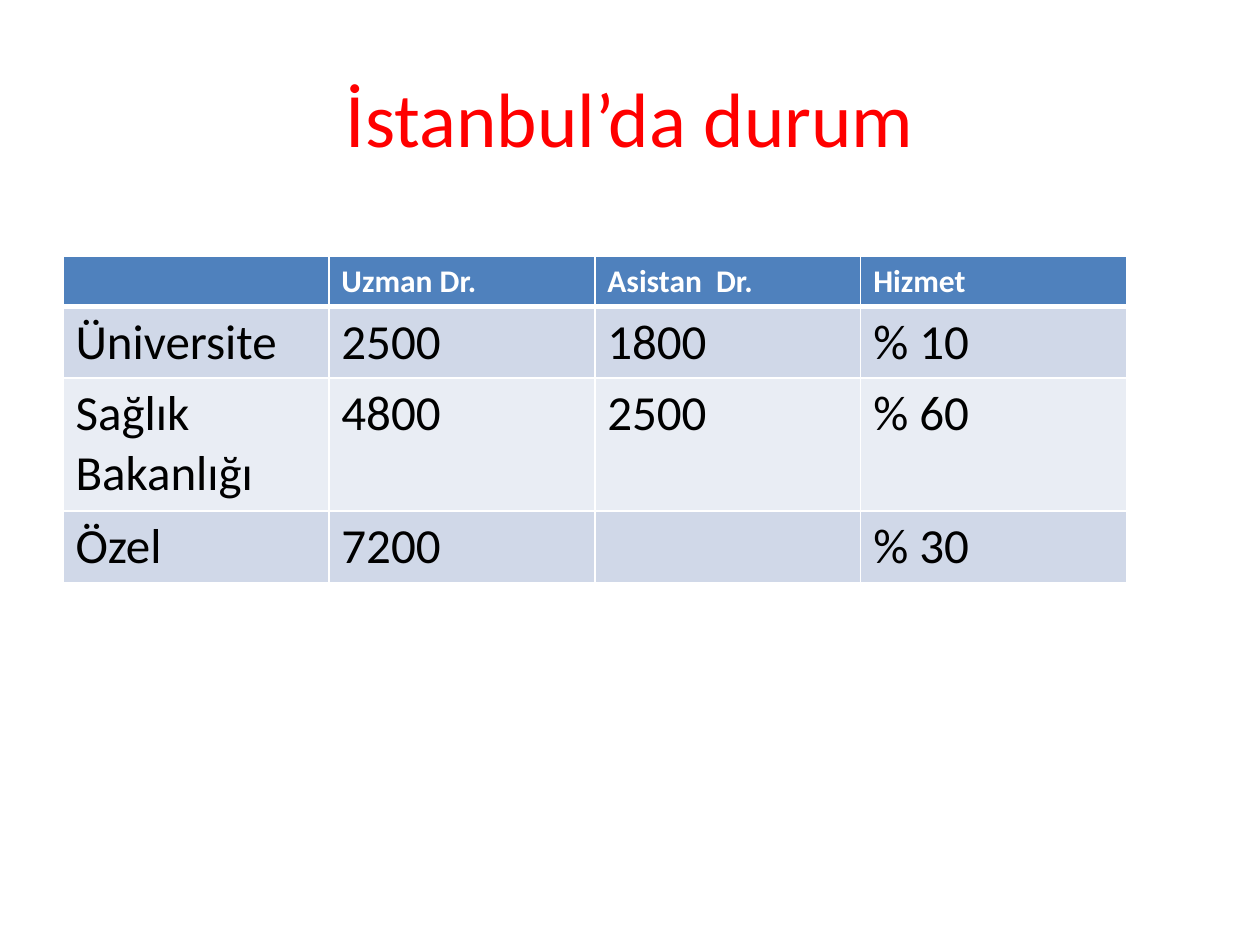
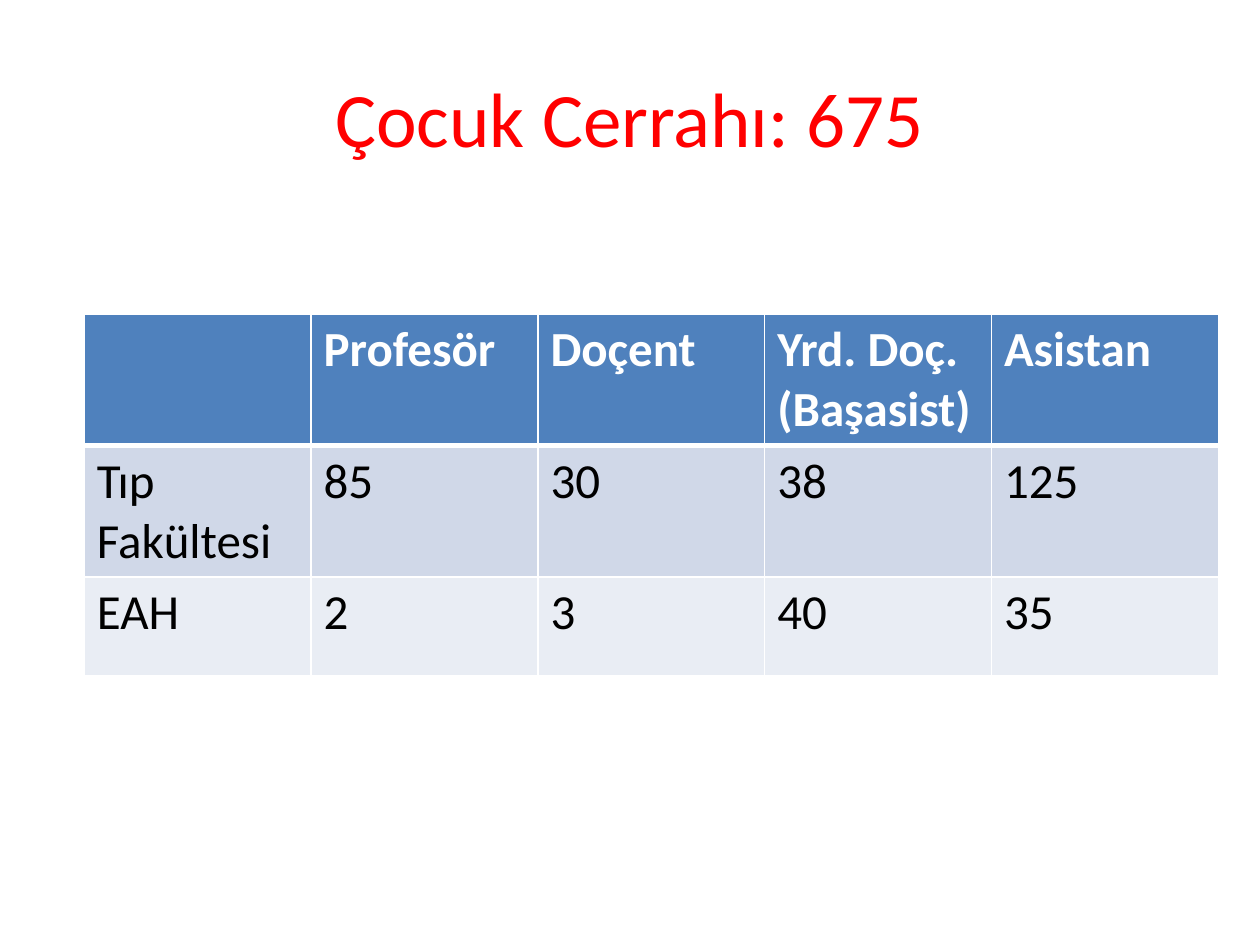
import pptx
import pptx.dml.color
import pptx.enum.text
import pptx.oxml
import pptx.oxml.ns
import pptx.util
from pptx.util import Cm

RGB = pptx.dml.color.RGBColor
RED = RGB(0xFF, 0x00, 0x00)
WHITE = RGB(0xFF, 0xFF, 0xFF)
BLACK = RGB(0x00, 0x00, 0x00)
BLUE = RGB(0x4F, 0x81, 0xBD)
BANDS = (RGB(0xD0, 0xD8, 0xE8), RGB(0xE9, 0xED, 0xF4))
FONT = "Calibri"


def write(frame, text, size=28, color=BLACK, bold=False, align=None):
    """Put one formatted paragraph into a text frame."""
    para = frame.paragraphs[0]
    para.alignment = align
    run = para.add_run()
    run.text = text
    font = run.font
    font.name, font.size, font.bold = FONT, pptx.util.Pt(size), bold
    font.color.rgb = color


def edge(cell, side, width):
    """Draw one white border of a cell; side is L, R, T or B."""
    line = pptx.oxml.parse_xml(
        f'<a:ln{side} {pptx.oxml.ns.nsdecls("a")} w="{pptx.util.Pt(width)}">'
        f'<a:solidFill><a:srgbClr val="{WHITE}"/></a:solidFill></a:ln{side}>')
    cell._tc.get_or_add_tcPr().append(line)


class Deck:
    def __init__(self):
        self.file = pptx.Presentation()
        self.file.slide_width, self.file.slide_height = Cm(25.4), Cm(19.05)
        self.slide = None

    def page(self, title):
        """Start a slide with its red title."""
        self.slide = self.file.slides.add_slide(self.file.slide_layouts[6])
        box = self.slide.shapes.add_textbox(Cm(1.27), Cm(0.76), Cm(22.86), Cm(3.18))
        frame = box.text_frame
        frame.word_wrap = True
        frame.vertical_anchor = pptx.enum.text.MSO_ANCHOR.MIDDLE
        write(frame, title, size=44, color=RED,
              align=pptx.enum.text.PP_ALIGN.CENTER)

    def table(self, rows, left, top, width, highs, head=28):
        """Add a banded table with equal columns and a blue head row."""
        shape = self.slide.shapes.add_table(
            len(rows), len(rows[0]), Cm(left), Cm(top), Cm(width), Cm(sum(highs)))
        grid = shape.table
        grid.horz_banding = False
        for r, (row, high) in enumerate(zip(rows, highs)):
            grid.rows[r].height = Cm(high)
            for c, text in enumerate(row):
                self.cell(grid.cell(r, c), text, r, head)

    def cell(self, cell, text, r, head):
        # The rule under the head row is thicker than the others
        for side in "LRTB":
            thick = (r, side) in ((0, "B"), (1, "T"))
            edge(cell, side, 3 if thick else 1)
        cell.fill.solid()
        cell.fill.fore_color.rgb = BANDS[(r - 1) % 2] if r else BLUE
        if text and r:
            write(cell.text_frame, text)
        elif text:
            write(cell.text_frame, text, size=head, color=WHITE, bold=True)


def main():
    deck = Deck()

    # Doctors in Istanbul
    deck.page("İstanbul’da durum")
    deck.table([
        ("", "Uzman Dr.", "Asistan  Dr.", "Hizmet"),
        ("Üniversite", "2500", "1800", "% 10"),
        ("Sağlık Bakanlığı", "4800", "2500", "% 60"),
        ("Özel", "7200", "", "% 30"),
    ], 1.27, 5.16, 21.44, (1, 1.44, 2.68, 1.44), head=18)

    # Paediatric surgeons by rank
    deck.page("Çocuk Cerrahı: 675")
    deck.table([
        ("", "Profesör", "Doçent", "Yrd. Doç. (Başasist)", "Asistan"),
        ("Tıp Fakültesi", "85", "30", "38", "125"),
        ("EAH", "2", "3", "40", "35"),
    ], 1.7, 6.33, 22.86, (2.65, 2.65, 2))

    deck.file.save("out.pptx")


if __name__ == "__main__":
    main()
